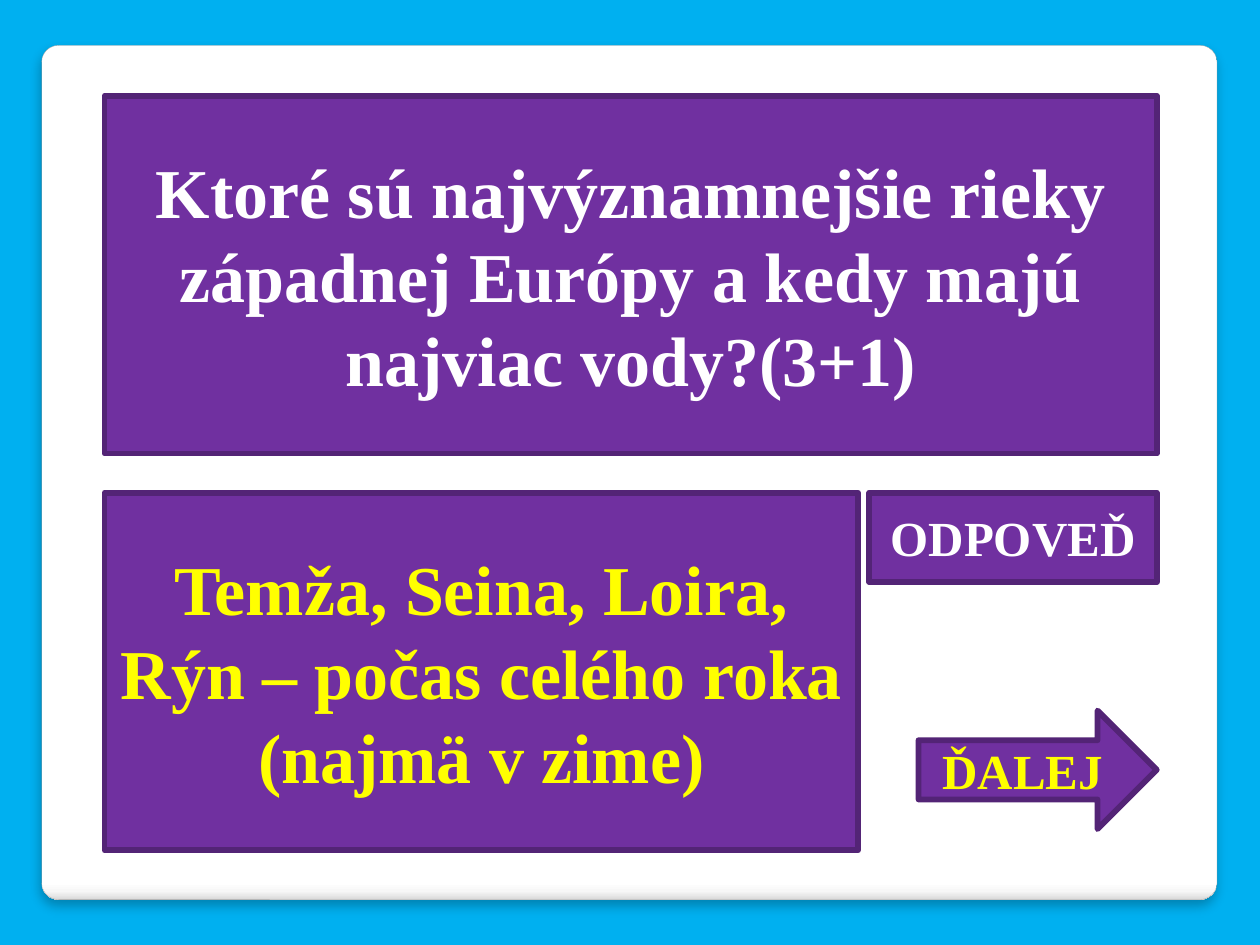
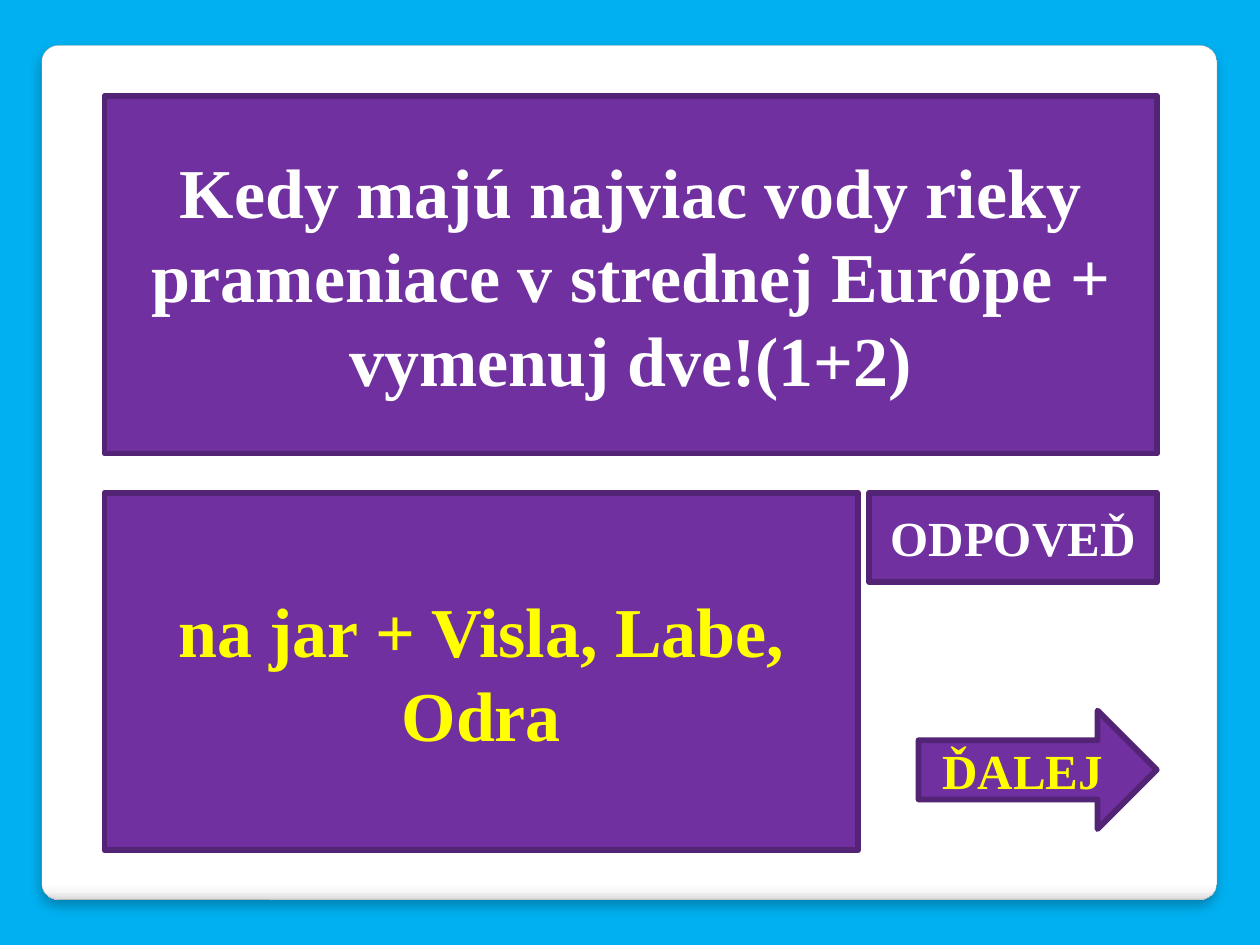
"""Build two quiz slides, each with a question, its answer and two buttons."""
from lxml.etree import SubElement
from pptx import Presentation
from pptx.dml.color import RGBColor
from pptx.enum.shapes import MSO_SHAPE
from pptx.enum.text import MSO_ANCHOR, MSO_AUTO_SIZE, PP_ALIGN
from pptx.oxml import parse_xml
from pptx.oxml.ns import nsdecls, qn
from pptx.util import Inches, Pt

QUIZ = [
    {
        "question": "Ktoré sú najvýznamnejšie rieky západnej Európy a kedy majú najviac vody?(3+1)",
        "answer": "Temža, Seina, Loira, Rýn – počas celého roka (najmä v zime)",
    },
    {
        "question": "Kedy majú najviac vody rieky prameniace v strednej Európe + vymenuj dve!(1+2)",
        "answer": "na jar + Visla, Labe, Odra",
    },
]
ANSWER_LABEL = "ODPOVEĎ"
NEXT_LABEL = "ĎALEJ"


class Theme:
    """Colours, type and line sizes of the deck."""

    sky = "00B0F0"
    purple = "7030A0"
    edge = "532476"
    white = "FFFFFF"
    yellow = "FFFF00"
    panel_edge = "A4A4A4"
    panel_stops = [(0, "FFFFFF"), (98, "FFFFFF"), (99, "F7F7F7"), (100, "DADADA")]
    font = "Times New Roman"
    large = 40
    small = 28
    edge_width = 3.35
    panel_edge_width = 0.16


SLIDE_WIDTH, SLIDE_HEIGHT = 10, 7.5
LEFT, RIGHT = 0.83, 9.18
QUESTION_TOP, ANSWER_TOP = 0.76, 3.91
CARD_HEIGHT = 2.84
ANSWER_WIDTH = 5.98
BUTTON_WIDTH, BUTTON_HEIGHT = 2.28, 0.71
ARROW_TOP, ARROW_WIDTH, ARROW_HEIGHT = 5.64, 1.89, 0.94
PANEL = (0.33, 0.36, 9.33, 6.78)


def colour(value):
    """Turn a hex value into a colour."""
    return RGBColor.from_string(value)


def apply(target, values):
    """Set each attribute of the target from a dict."""
    for name, value in values.items():
        setattr(target, name, value)


def place(shape, left, top, width, height):
    """Position a shape, in inches."""
    apply(shape, {"left": Inches(left), "top": Inches(top),
                  "width": Inches(width), "height": Inches(height)})


def outline(shape, value, width):
    """Give a shape a solid outline."""
    shape.line.color.rgb = colour(value)
    shape.line.width = Pt(width)


def style_card(shape, text, ink, size):
    """Paint a shape as a purple card with centred bold text."""
    shape.fill.solid()
    shape.fill.fore_color.rgb = colour(Theme.purple)
    outline(shape, Theme.edge, Theme.edge_width)
    frame = shape.text_frame
    apply(frame, {"word_wrap": True, "auto_size": MSO_AUTO_SIZE.NONE,
                  "vertical_anchor": MSO_ANCHOR.MIDDLE})
    para = frame.paragraphs[0]
    para.alignment = PP_ALIGN.CENTER
    span = para.add_run()
    span.text = text
    apply(span.font, {"name": Theme.font, "size": Pt(size), "bold": True})
    span.font.color.rgb = colour(ink)


def add_card(page, kind, bounds, text, ink, size):
    """Add a card shape to a page."""
    card = page.shapes.add_shape(kind, *map(Inches, bounds))
    card.shadow.inherit = False
    style_card(card, text, ink, size)


def add_panel(page, layout):
    """Draw the white panel and hand it to the layout, behind everything."""
    panel = page.shapes.add_shape(MSO_SHAPE.ROUNDED_RECTANGLE, *map(Inches, PANEL))
    panel.adjustments[0] = 0.02
    outline(panel, Theme.panel_edge, Theme.panel_edge_width)
    stops = "".join(f'<a:gs pos="{pos * 1000}"><a:srgbClr val="{value}"/></a:gs>'
                    for pos, value in Theme.panel_stops)
    gradient = parse_xml(f'<a:gradFill {nsdecls("a")}><a:gsLst>{stops}</a:gsLst>'
                         '<a:lin ang="5400000" scaled="0"/></a:gradFill>')
    properties = panel.element.spPr
    properties.find(qn("a:prstGeom")).addnext(gradient)
    panel.shadow.inherit = False
    shadow = SubElement(properties.find(qn("a:effectLst")), qn("a:outerShdw"),
                        blurRad=str(Pt(6)), dist=str(Pt(4)), dir="5400000",
                        algn="t", rotWithShape="0")
    ink = SubElement(shadow, qn("a:srgbClr"), val="000000")
    SubElement(ink, qn("a:alpha"), val="25000")
    layout.shapes.element.insert(2, panel.element)


def add_quiz_page(page, item):
    """Fill a page with one question, its answer and the buttons."""
    place(page.shapes.title, LEFT, QUESTION_TOP, RIGHT - LEFT, CARD_HEIGHT)
    style_card(page.shapes.title, item["question"], Theme.white, Theme.large)
    add_card(page, MSO_SHAPE.RECTANGLE, (LEFT, ANSWER_TOP, ANSWER_WIDTH, CARD_HEIGHT),
             item["answer"], Theme.yellow, Theme.large)
    add_card(page, MSO_SHAPE.RECTANGLE,
             (RIGHT - BUTTON_WIDTH, ANSWER_TOP, BUTTON_WIDTH, BUTTON_HEIGHT),
             ANSWER_LABEL, Theme.white, Theme.small)
    add_card(page, MSO_SHAPE.RIGHT_ARROW,
             (RIGHT - ARROW_WIDTH, ARROW_TOP, ARROW_WIDTH, ARROW_HEIGHT),
             NEXT_LABEL, Theme.yellow, Theme.small)


def main():
    """Build and save the deck."""
    deck = Presentation()
    apply(deck, {"slide_width": Inches(SLIDE_WIDTH), "slide_height": Inches(SLIDE_HEIGHT)})
    layout = deck.slide_layouts.get_by_name("Title Only")
    layout.background.fill.solid()
    layout.background.fill.fore_color.rgb = colour(Theme.sky)
    pages = [deck.slides.add_slide(layout) for _ in QUIZ]
    add_panel(pages[0], layout)
    for page, item in zip(pages, QUIZ):
        add_quiz_page(page, item)
    deck.save("out.pptx")


if __name__ == "__main__":
    main()
